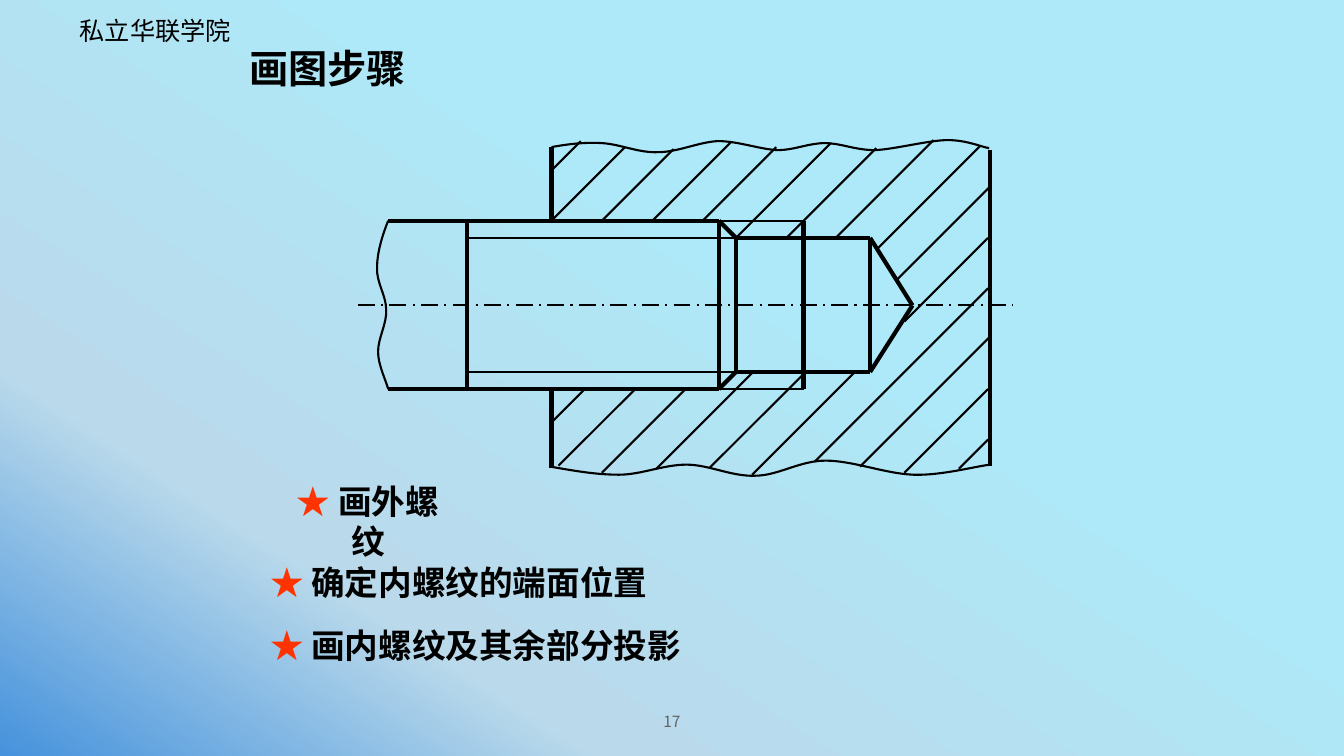
from copy import deepcopy
from dataclasses import dataclass

from lxml import etree
from pptx import Presentation
from pptx import util as u
from pptx.dml.color import RGBColor
from pptx.enum import dml, shapes, text
from pptx.oxml.ns import qn


@dataclass(frozen=True)
class Theme:
    ink: str = "000000"
    star: str = "FF3300"
    page: str = "636363"
    gradient: tuple = ((0, "4692DC"), (0.24, "BADAEB"), (0.62, "ADE9F8"))
    gradient_angle: int = 57
    body_font: str = "Noto Sans CJK SC"
    school_font: str = "Noto Sans CJK JP"
    title_font: str = "Arial"
    title_size: int = 28
    step_size: int = 24
    school_size: int = 18
    page_size: int = 11
    thick: float = 3
    thin: float = 1.5


THEME = Theme()

# Main levels of the drawing, in inches
AXIS = 3.03
MAJOR_TOP, MAJOR_BOTTOM = 2.19, 3.86
MINOR_TOP, MINOR_BOTTOM = 2.36, 3.69
BLOCK_LEFT, BLOCK_RIGHT = 5.47, 9.82
SHANK_LEFT, THREAD_START, CHAMFER, BOLT_END = 3.85, 4.63, 7.13, 7.3
THREAD_END, HOLE_END, CONE_TIP = 7.97, 8.63, 9.05

# Section lines run at 45 degrees: lower end x, y and rise
HATCHING = [
    (5.47, 1.69, 0.29), (5.47, 2.19, 0.73), (5.97, 2.19, 0.71),
    (6.47, 2.19, 0.78), (6.97, 2.19, 0.73), (7.3, 2.36, 0.94),
    (7.8, 2.36, 0.89), (8.29, 2.36, 0.97), (8.71, 2.46, 1.01),
    (8.89, 2.78, 0.92), (8.97, 3.19, 0.83), (8.08, 4.58, 1.72),
    (8.53, 4.63, 1.29), (8.97, 4.69, 0.83), (9.51, 4.65, 0.29),
    (7.46, 4.71, 1.02), (7.04, 4.64, 0.96), (6.51, 4.65, 0.96),
    (5.97, 4.69, 0.83), (5.54, 4.62, 0.76), (5.47, 4.19, 0.33),
]

# Break lines: a start point, then three Bezier points per segment
BLOCK_TOP_BREAK = [
    (5.47, 1.46), (5.63, 1.43), (5.8, 1.41), (5.97, 1.42),
    (6.15, 1.43), (6.34, 1.52), (6.53, 1.51),
    (6.72, 1.51), (6.93, 1.41), (7.12, 1.4),
    (7.32, 1.4), (7.53, 1.48), (7.71, 1.49),
    (7.88, 1.49), (8.02, 1.42), (8.18, 1.42),
    (8.34, 1.42), (8.48, 1.49), (8.68, 1.49),
    (8.88, 1.48), (9.22, 1.39), (9.4, 1.39),
    (9.59, 1.39), (9.74, 1.46), (9.81, 1.47),
]
BLOCK_BOTTOM_BREAK = [
    (5.46, 4.63), (5.69, 4.67), (5.91, 4.71), (6.14, 4.71),
    (6.36, 4.71), (6.58, 4.61), (6.81, 4.61),
    (7.03, 4.61), (7.26, 4.73), (7.49, 4.72),
    (7.72, 4.72), (7.93, 4.57), (8.19, 4.57),
    (8.46, 4.57), (8.78, 4.7), (9.06, 4.71),
    (9.33, 4.72), (9.66, 4.63), (9.82, 4.61),
]
SHANK_BREAK = [
    (3.85, 2.19), (3.79, 2.34), (3.74, 2.51), (3.74, 2.65),
    (3.73, 2.8), (3.83, 2.93), (3.83, 3.07),
    (3.84, 3.21), (3.75, 3.35), (3.75, 3.49),
    (3.75, 3.62), (3.83, 3.78), (3.85, 3.86),
]


def paint_background(slide):
    fill = slide.background.fill
    fill.gradient()
    fill.gradient_angle = THEME.gradient_angle
    stops = slide.element.find(".//" + qn("a:gsLst"))
    stops.append(deepcopy(stops[-1]))
    for stop, (position, color) in zip(fill.gradient_stops, THEME.gradient):
        stop.position = position
        stop.color.rgb = RGBColor.from_string(color)


def add_run(paragraph, wording, size, color, font, bold=False):
    run = paragraph.add_run()
    run.text = wording
    run.font.size = u.Pt(size)
    run.font.bold = bold
    run.font.name = font
    run.font.color.rgb = RGBColor.from_string(color)
    east_asian = etree.SubElement(run.font._element, qn("a:ea"))
    east_asian.set("typeface", THEME.body_font if font == THEME.title_font else font)


def set_frame(shape, inset, anchor, align):
    frame = shape.text_frame
    frame.word_wrap = True
    frame.vertical_anchor = anchor
    frame.margin_left = frame.margin_right = u.Inches(inset)
    frame.margin_top = frame.margin_bottom = u.Inches(0.05)
    frame.paragraphs[0].alignment = align
    return frame.paragraphs[0]


def add_label(slide, box, inset=0.05, anchor=text.MSO_ANCHOR.MIDDLE,
              align=text.PP_ALIGN.LEFT):
    label = slide.shapes.add_textbox(*map(u.Inches, box))
    return set_frame(label, inset, anchor, align)


def add_step(slide, box, wording, align=text.PP_ALIGN.LEFT):
    step = add_label(slide, box, inset=0.1, align=align)
    for part, color in (("★ ", THEME.star), (wording, THEME.ink)):
        add_run(step, part, THEME.step_size, color, THEME.body_font, bold=True)


def add_edge(parent, start, end, width=THEME.thick, dash=None):
    edge = parent.shapes.add_connector(
        shapes.MSO_CONNECTOR.STRAIGHT, *map(u.Inches, (*start, *end)))
    edge.line.color.rgb = RGBColor.from_string(THEME.ink)
    edge.line.width = u.Pt(width)
    if dash:
        edge.line.dash_style = dash
    etree.SubElement(edge._element.spPr, qn("a:effectLst"))


def add_break_line(parent, points):
    start, *rest = [(u.Inches(x), u.Inches(y)) for x, y in points]
    builder = parent.shapes.build_freeform(*start)
    builder.add_line_segments(rest, close=False)
    wave = builder.convert_to_shape()
    wave.shadow.inherit = False
    wave.fill.background()
    wave.line.color.rgb = RGBColor.from_string(THEME.ink)
    wave.line.width = u.Pt(THEME.thin)
    # Merge every three line segments into one Bezier segment
    outline = wave._element.find(".//" + qn("a:path"))
    segments = outline.findall(qn("a:lnTo"))
    for first in range(0, len(segments), 3):
        curve = etree.SubElement(outline, qn("a:cubicBezTo"))
        for segment in segments[first:first + 3]:
            curve.append(segment[0])
            outline.remove(segment)


def draw_hole(slide):
    add_edge(slide, (BLOCK_LEFT, MAJOR_BOTTOM), (BLOCK_LEFT, 4.64))
    for y in (MAJOR_TOP, MAJOR_BOTTOM):
        add_edge(slide, (CHAMFER, y), (THREAD_END, y), THEME.thin)
    add_edge(slide, (THREAD_END, MAJOR_TOP), (THREAD_END, MAJOR_BOTTOM))
    for y in (MINOR_TOP, MINOR_BOTTOM):
        add_edge(slide, (BOLT_END, y), (HOLE_END, y))
        add_edge(slide, (HOLE_END, y), (CONE_TIP, AXIS))
    add_edge(slide, (HOLE_END, MINOR_TOP), (HOLE_END, MINOR_BOTTOM))
    add_edge(slide, (BLOCK_RIGHT, 1.49), (BLOCK_RIGHT, 4.62))

    section = slide.shapes.add_group_shape()
    for x, y, rise in HATCHING:
        add_edge(section, (x, y), (x + rise, y - rise), THEME.thin)
    add_edge(slide, (3.55, AXIS), (10.05, AXIS), THEME.thin,
             dml.MSO_LINE.LONG_DASH_DOT)
    add_edge(slide, (BLOCK_LEFT, MAJOR_TOP), (BLOCK_LEFT, 1.46))


def draw_bolt(slide):
    bolt = slide.shapes.add_group_shape()
    for major, minor in ((MAJOR_TOP, MINOR_TOP), (MAJOR_BOTTOM, MINOR_BOTTOM)):
        add_edge(bolt, (THREAD_START, minor), (BOLT_END, minor), THEME.thin)
        add_edge(bolt, (SHANK_LEFT, major), (CHAMFER, major))
        add_edge(bolt, (CHAMFER, major), (BOLT_END, minor))
    for x in (THREAD_START, CHAMFER):
        add_edge(bolt, (x, MAJOR_TOP), (x, MAJOR_BOTTOM))
    add_edge(bolt, (BOLT_END, MINOR_TOP), (BOLT_END, MINOR_BOTTOM))
    add_break_line(bolt, SHANK_BREAK)


def main():
    deck = Presentation()
    deck.slide_width, deck.slide_height = u.Inches(13.33), u.Inches(7.5)
    slide = deck.slides.add_slide(deck.slide_layouts[5])
    paint_background(slide)

    # School name, title and page number
    school = add_label(slide, (0.74, 0.1, 2.94, 0.4), anchor=text.MSO_ANCHOR.TOP)
    add_run(school, "私立华联学院", THEME.school_size, THEME.ink, THEME.school_font)
    title = slide.shapes.title
    title.left, title.top, title.width, title.height = map(
        u.Inches, (2.42, 0.38, 7.5, 0.65))
    heading = set_frame(title, 0.05, text.MSO_ANCHOR.MIDDLE, text.PP_ALIGN.LEFT)
    heading.line_spacing = 0.9
    add_run(heading, "画图步骤", THEME.title_size, THEME.ink, THEME.title_font, bold=True)
    page = add_label(slide, (6.53, 7.01, 0.28, 0.29), align=text.PP_ALIGN.JUSTIFY)
    add_run(page, "17", THEME.page_size, THEME.page, THEME.body_font)

    # Drawing and its steps
    draw_hole(slide)
    add_step(slide, (2.69, 4.92, 1.92, 0.5), "画外螺纹", text.PP_ALIGN.CENTER)
    add_step(slide, (2.58, 5.52, 4.06, 0.5), "确定内螺纹的端面位置")
    add_step(slide, (2.58, 6.15, 4.39, 0.5), "画内螺纹及其余部分投影")
    add_break_line(slide, BLOCK_TOP_BREAK)
    add_break_line(slide, BLOCK_BOTTOM_BREAK)
    draw_bolt(slide)
    deck.save("out.pptx")


if __name__ == "__main__":
    main()
